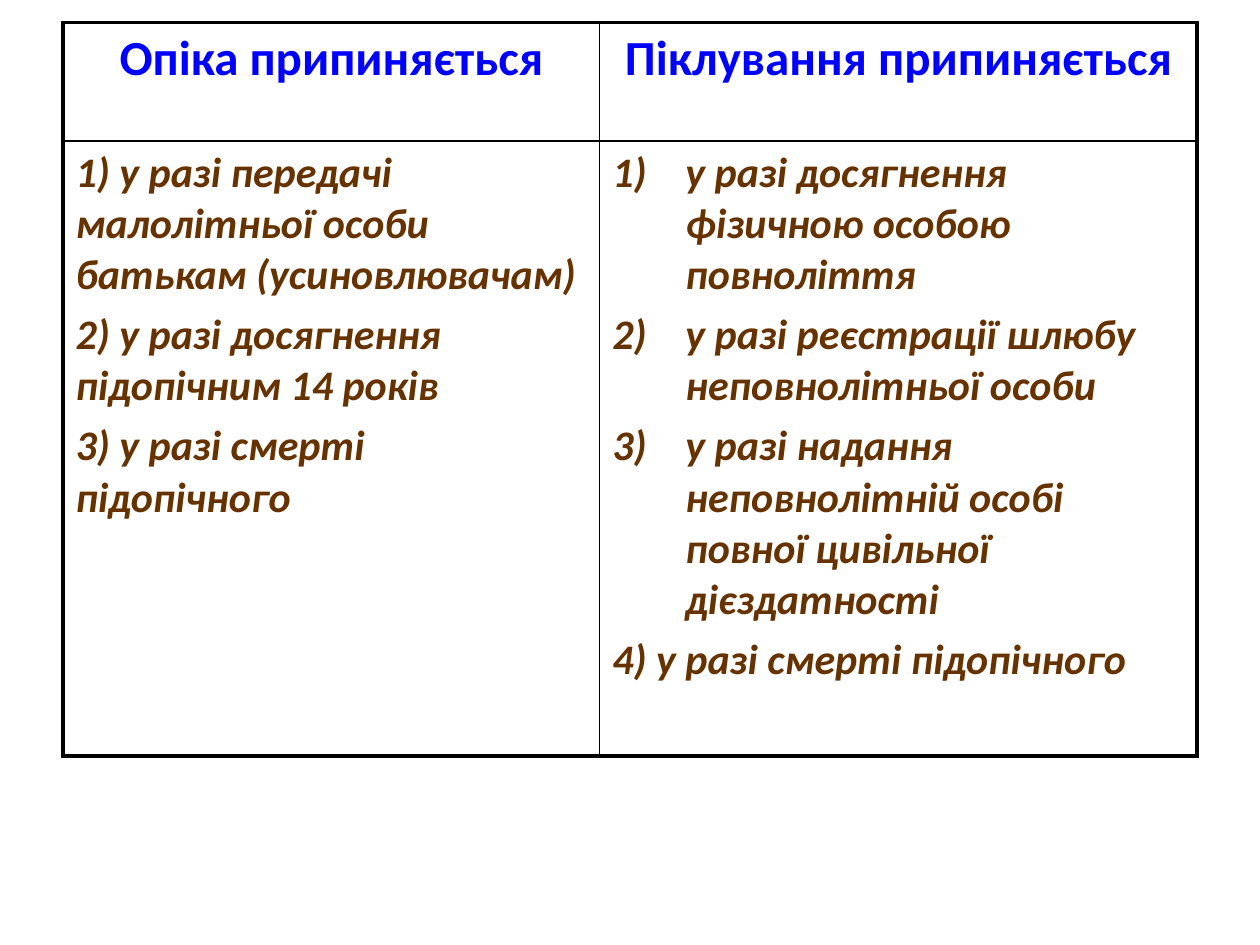
from dataclasses import dataclass

from lxml import etree
from pptx import Presentation
from pptx import util as u
from pptx.dml.color import RGBColor
from pptx.enum import text
from pptx.oxml.ns import qn

WIDTH, HEIGHT = 10, 7.5
COLUMNS = (4.26, 4.74)
ROWS = (0.94, 4.88)
OUTER, INNER = 2.25, 1
HANGING = 0.58


@dataclass(frozen=True)
class Entry:
    words: str
    numbered: bool = False
    hanging: bool = False


@dataclass(frozen=True)
class Topic:
    heading: str
    grounds: tuple[Entry, ...]


TOPICS = (
    Topic("Опіка припиняється", (
        Entry("1) у разі передачі малолітньої особи батькам (усиновлювачам)"),
        Entry("2) у разі досягнення підопічним 14 років"),
        Entry("3) у разі смерті підопічного"),
    )),
    Topic("Піклування припиняється", (
        Entry("у разі досягнення фізичною особою повноліття", True, True),
        Entry("у разі реєстрації шлюбу неповнолітньої особи", True, True),
        Entry("у разі надання неповнолітній особі повної цивільної дієздатності", True, True),
        Entry("4) у разі смерті підопічного", hanging=True),
    )),
)


def colour(value: str) -> RGBColor:
    return RGBColor.from_string(value)


def write(para, words: str, *, size: float, ink: str, italic: bool = False,
          align=text.PP_ALIGN.LEFT, before: float = 0) -> None:
    para.alignment = align
    para.space_before = u.Pt(before)
    span = para.add_run()
    span.text = words
    span.font.name = "Calibri"
    span.font.size = u.Pt(size)
    span.font.bold = True
    span.font.italic = italic
    span.font.color.rgb = colour(ink)


def indent(para, numbered: bool) -> None:
    properties = para._p.get_or_add_pPr()
    properties.set("marL", str(u.Inches(HANGING)))
    properties.set("indent", str(-u.Inches(HANGING)))
    if numbered:
        etree.SubElement(properties, qn("a:buFont"), typeface="+mj-lt")
        etree.SubElement(properties, qn("a:buAutoNum"), type="arabicParenR")
    else:
        etree.SubElement(properties, qn("a:buNone"))


def frame(cell, row: int, column: int) -> None:
    outer_sides = {"L": column == 0, "R": column == len(COLUMNS) - 1,
                   "T": row == 0, "B": row == len(ROWS) - 1}
    properties = cell._tc.get_or_add_tcPr()
    for place, (side, is_outer) in enumerate(outer_sides.items()):
        line = etree.Element(qn(f"a:ln{side}"), w=str(u.Pt(OUTER if is_outer else INNER)))
        fill = etree.SubElement(line, qn("a:solidFill"))
        etree.SubElement(fill, qn("a:srgbClr"), val="000000")
        properties.insert(place, line)


def fill_column(table, column: int, topic: Topic) -> None:
    heading, body = table.cell(0, column), table.cell(1, column)
    write(heading.text_frame.paragraphs[0], topic.heading, size=28, ink="0000FF",
          align=text.PP_ALIGN.CENTER)
    for number, entry in enumerate(topic.grounds):
        box = body.text_frame
        para = box.add_paragraph() if number else box.paragraphs[0]
        if entry.hanging:
            indent(para, entry.numbered)
        write(para, entry.words, size=24, ink="663300", italic=True,
              before=5 if number else 0)
    for row, cell in enumerate((heading, body)):
        cell.fill.background()
        frame(cell, row, column)


def main() -> None:
    deck = Presentation()
    deck.slide_width, deck.slide_height = u.Inches(WIDTH), u.Inches(HEIGHT)
    page = deck.slides.add_slide(deck.slide_layouts[6])
    table = page.shapes.add_table(
        len(ROWS), len(COLUMNS), u.Inches(WIDTH * 0.05), u.Inches(0.18),
        u.Inches(sum(COLUMNS)), u.Inches(sum(ROWS))).table
    table.first_row = table.horz_banding = False
    for row, height in zip(table.rows, ROWS):
        row.height = u.Inches(height)
    for number, (width, topic) in enumerate(zip(COLUMNS, TOPICS)):
        table.columns[number].width = u.Inches(width)
        fill_column(table, number, topic)
    deck.save("out.pptx")


if __name__ == "__main__":
    main()
